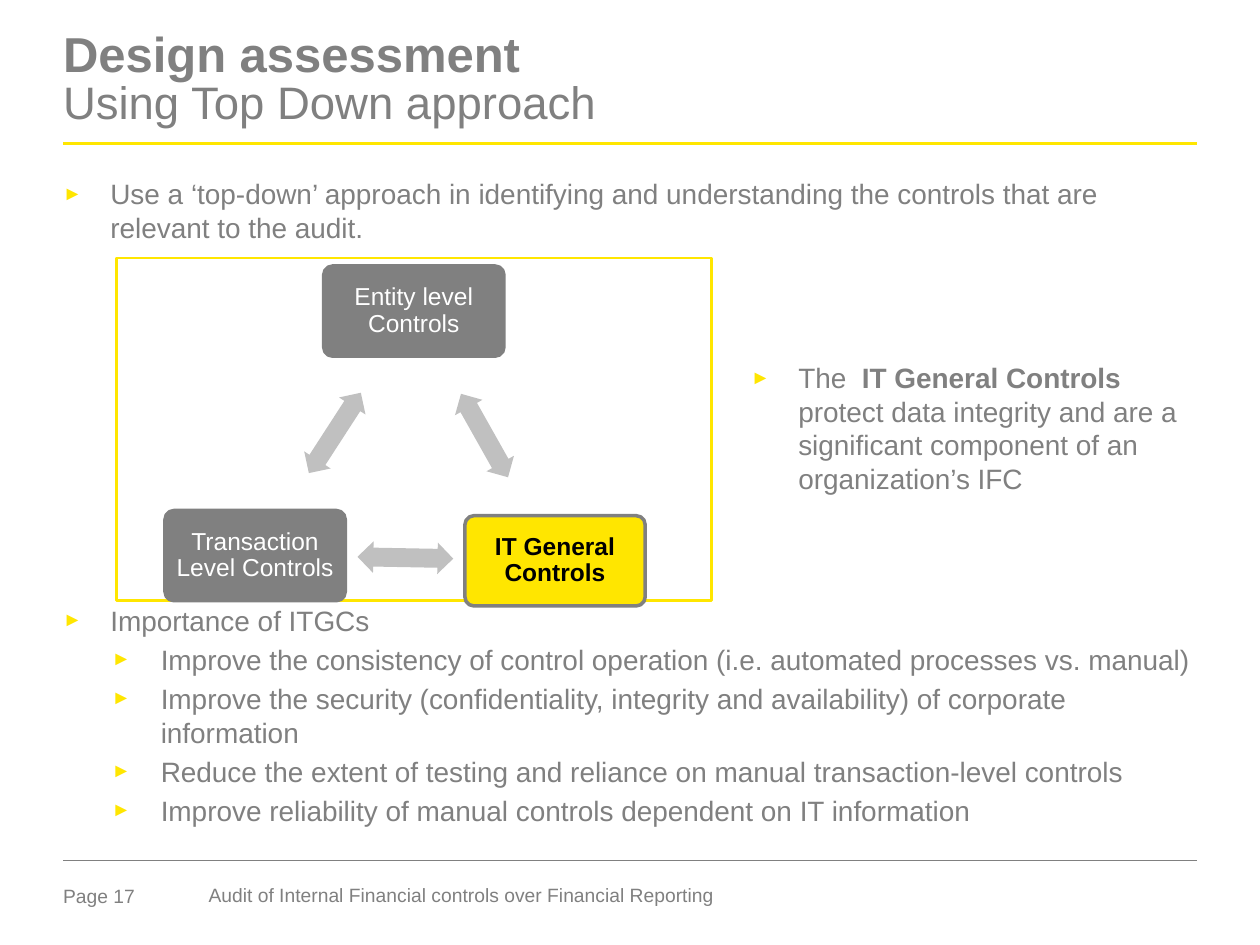
import pptx
import pptx.dml.color
import pptx.enum.shapes
import pptx.enum.text
import pptx.oxml.ns
import pptx.util
from lxml import etree

Pt = pptx.util.Pt
RGBColor = pptx.dml.color.RGBColor
MSO_SHAPE = pptx.enum.shapes.MSO_SHAPE
MSO_ANCHOR = pptx.enum.text.MSO_ANCHOR
PP_ALIGN = pptx.enum.text.PP_ALIGN
qn = pptx.oxml.ns.qn

GREY = RGBColor(0x80, 0x80, 0x80)
LIGHT_GREY = RGBColor(0xC0, 0xC0, 0xC0)
YELLOW = RGBColor(0xFF, 0xE6, 0x00)
WHITE = RGBColor(0xFF, 0xFF, 0xFF)
BLACK = RGBColor(0x00, 0x00, 0x00)

FONT = "Arial"
MARGIN = 36
CONTENT_WIDTH = 648
BODY_SIZE = 16
PARAGRAPH_GAP = 3.2
CARD_WIDTH, CARD_HEIGHT = 103, 51.6
ARROW_WIDTH, ARROW_HEIGHT = 54.7, 18

INTRODUCTION = (
    "Use a ‘top-down’ approach in identifying and understanding "
    "the controls that are relevant to the audit."
)
BENEFITS = [
    "Improve the consistency of control operation (i.e. automated processes vs. manual)",
    "Improve the security (confidentiality, integrity and availability) of corporate information",
    "Reduce the extent of testing and reliance on manual transaction-level controls",
    "Improve reliability of manual controls dependent on IT information",
]
CARDS = [
    ("Entity level Controls", 185, 152, GREY, WHITE, False),
    ("IT General Controls", 265.7, 294.7, YELLOW, BLACK, True),
    ("Transaction Level Controls", 94.3, 291.7, GREY, WHITE, False),
]
ARROWS = [(249.5, 239.9, 60.6), (204.3, 309.7, 181.1), (164, 238.4, 302.9)]


def format_font(font, size, color, bold=False):
    font.name = FONT
    font.size = Pt(size)
    font.color.rgb = color
    font.bold = bold


def set_frame(frame, inset=0, top=None, anchor=MSO_ANCHOR.TOP):
    frame.word_wrap = True
    frame.auto_size = pptx.enum.text.MSO_AUTO_SIZE.NONE
    frame.vertical_anchor = anchor
    frame.margin_left = frame.margin_right = frame.margin_bottom = Pt(inset)
    frame.margin_top = Pt(inset if top is None else top)


def add_text_frame(slide, left, top, width, height, top_inset=0):
    box = slide.shapes.add_textbox(Pt(left), Pt(top), Pt(width), Pt(height))
    set_frame(box.text_frame, top=top_inset)
    return box.text_frame


def set_title(slide, heading, subheading):
    title = slide.shapes.title
    title.left, title.top = Pt(MARGIN), Pt(18.7)
    title.width, title.height = Pt(CONTENT_WIDTH), Pt(60)
    set_frame(title.text_frame)
    paragraph = title.text_frame.paragraphs[0]
    paragraph.alignment = PP_ALIGN.LEFT
    paragraph.line_spacing = 0.85
    run = paragraph.add_run()
    run.text = heading
    format_font(run.font, 28, GREY, True)
    paragraph.add_line_break()
    run = paragraph.add_run()
    run.text = subheading
    format_font(run.font, 26, GREY)


def add_rule(slide, top, color, weight):
    rule = slide.shapes.add_connector(
        pptx.enum.shapes.MSO_CONNECTOR.STRAIGHT,
        Pt(MARGIN), Pt(top), Pt(MARGIN + CONTENT_WIDTH), Pt(top),
    )
    rule.line.color.rgb = color
    rule.line.width = Pt(weight)
    etree.SubElement(rule._element.spPr, qn("a:effectLst"))


def format_bullet(paragraph, margin=27.1, indent=27.1):
    paragraph.space_before = Pt(PARAGRAPH_GAP)
    format_font(paragraph.font, BODY_SIZE, GREY)
    properties = paragraph._p.get_or_add_pPr()
    properties.set("marL", str(Pt(margin)))
    properties.set("indent", str(-Pt(indent)))
    settings = [
        etree.Element(qn("a:buClr")),
        etree.Element(qn("a:buSzPct"), val="70000"),
        etree.Element(qn("a:buFont"), typeface=FONT),
        etree.Element(qn("a:buChar"), char="►"),
    ]
    etree.SubElement(settings[0], qn("a:srgbClr"), val=str(YELLOW))
    default_font = properties.find(qn("a:defRPr"))
    for setting in settings:
        default_font.addprevious(setting)


def add_bullets(slide, top, height, heading, details=()):
    frame = add_text_frame(slide, MARGIN, top, CONTENT_WIDTH, height)
    frame.paragraphs[0].text = heading
    format_bullet(frame.paragraphs[0])
    for detail in details:
        paragraph = frame.add_paragraph()
        paragraph.text = detail
        paragraph.level = 1
        format_bullet(paragraph, 55.9, 28.1)


def add_side_note(slide):
    frame = add_text_frame(slide, 429.1, 203.2, 257, 84, 2.9)
    paragraph = frame.paragraphs[0]
    format_bullet(paragraph)
    for text, bold in [
        ("The  ", False),
        ("IT General Controls", True),
        ("  protect data integrity and are a significant component of an organization’s IFC", False),
    ]:
        run = paragraph.add_run()
        run.text = text
        format_font(run.font, BODY_SIZE, GREY, bold)


def add_diagram_border(slide):
    border = slide.shapes.add_shape(
        MSO_SHAPE.RECTANGLE, Pt(66.7), Pt(147.5), Pt(339.8), Pt(195.6)
    )
    border.shadow.inherit = False
    border.fill.background()
    border.line.color.rgb = YELLOW
    border.line.width = Pt(1.5)


def add_card(slide, text, left, top, fill, color, bold):
    card = slide.shapes.add_shape(
        MSO_SHAPE.ROUNDED_RECTANGLE, Pt(left), Pt(top), Pt(CARD_WIDTH), Pt(CARD_HEIGHT)
    )
    card.adjustments[0] = 0.1
    card.shadow.inherit = False
    card.fill.solid()
    card.fill.fore_color.rgb = fill
    card.line.color.rgb = GREY
    card.line.width = Pt(2)
    set_frame(card.text_frame, inset=4, anchor=MSO_ANCHOR.MIDDLE)
    paragraph = card.text_frame.paragraphs[0]
    paragraph.text = text
    paragraph.alignment = PP_ALIGN.CENTER
    paragraph.line_spacing = 0.9
    format_font(paragraph.font, 14, color, bold)


def add_arrow(slide, left, top, rotation):
    arrow = slide.shapes.add_shape(
        MSO_SHAPE.LEFT_RIGHT_ARROW, Pt(left), Pt(top), Pt(ARROW_WIDTH), Pt(ARROW_HEIGHT)
    )
    arrow.adjustments[0] = 0.6
    arrow.adjustments[1] = 0.5
    arrow.rotation = rotation
    arrow.shadow.inherit = False
    arrow.fill.solid()
    arrow.fill.fore_color.rgb = LIGHT_GREY
    arrow.line.fill.background()


def add_footer_text(slide, text, left, top, width, top_inset=0, line_spacing=1.0):
    frame = add_text_frame(slide, left, top, width, 15.8, top_inset)
    paragraph = frame.paragraphs[0]
    paragraph.text = text
    paragraph.line_spacing = line_spacing
    format_font(paragraph.font, 11, GREY)


def main():
    presentation = pptx.Presentation()
    presentation.slide_width, presentation.slide_height = Pt(720), Pt(540)
    slide = presentation.slides.add_slide(presentation.slide_layouts[5])
    add_footer_text(slide, "Page 17", MARGIN, 505.4, 56.9)
    add_footer_text(
        slide, "Audit of Internal Financial controls over Financial Reporting",
        119.2, 504, 311, 2.9, 0.85,
    )
    add_rule(slide, 82.2, YELLOW, 1.5)
    add_rule(slide, 491.8, GREY, 0.25)
    set_title(slide, "Design assessment", "Using Top Down approach")
    add_bullets(slide, 101, 44, INTRODUCTION)
    add_bullets(slide, 344.6, 137, "Importance of ITGCs", BENEFITS)
    add_side_note(slide)
    add_diagram_border(slide)
    for card in CARDS:
        add_card(slide, *card)
    for arrow in ARROWS:
        add_arrow(slide, *arrow)
    presentation.save("out.pptx")


if __name__ == "__main__":
    main()
